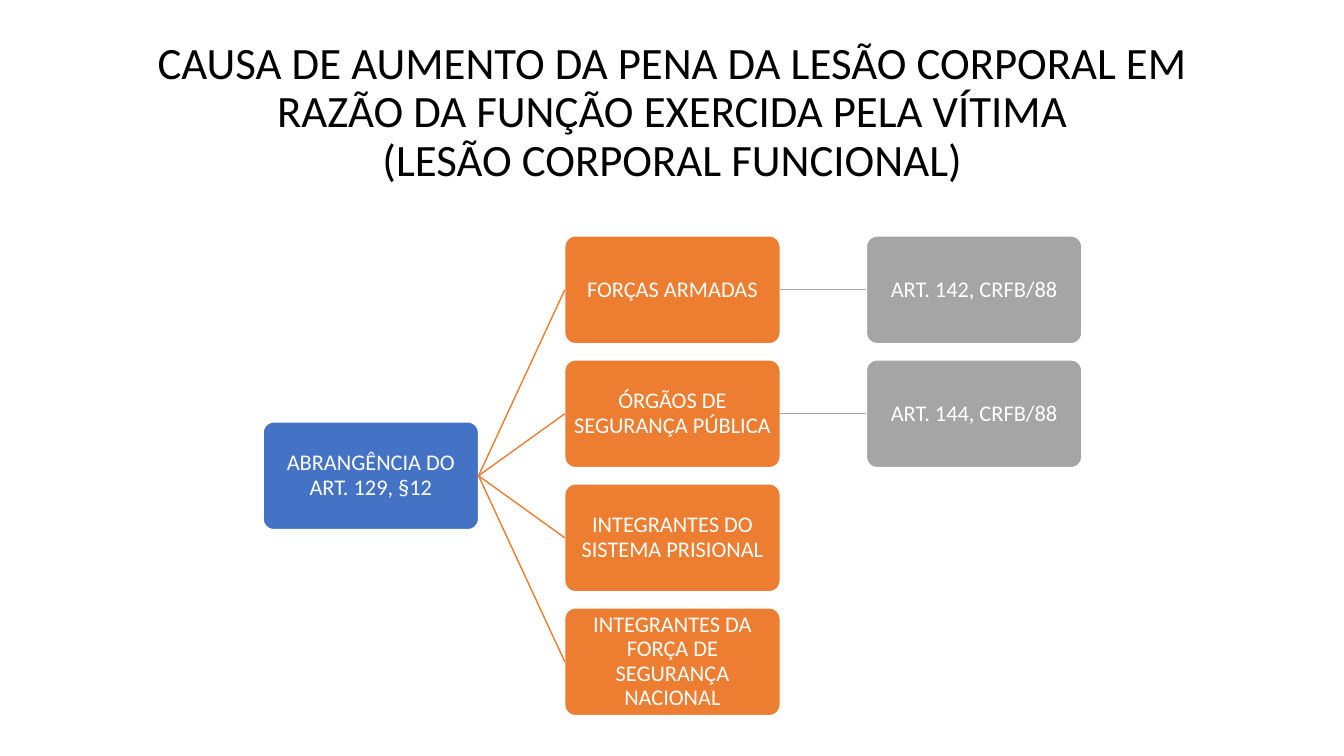
from collections import namedtuple
from dataclasses import dataclass

from lxml.etree import SubElement
from pptx import Presentation
from pptx.dml.color import RGBColor
from pptx.enum.shapes import MSO_CONNECTOR as Connector, MSO_SHAPE as Shape
from pptx.enum.text import MSO_ANCHOR as Anchor, PP_ALIGN as Align
from pptx.oxml.ns import qn
from pptx.util import Inches, Pt

Box = namedtuple("Box", "left top width height")


@dataclass(frozen=True)
class Theme:
    font: str = "Calibri"
    title_size: int = 32
    node_size: int = 16
    line_width: int = 1
    title_color: str = "000000"
    node_text: str = "FFFFFF"
    node_border: str = "FFFFFF"
    levels: tuple = ("4472C4", "ED7D31", "A5A5A5")


THEME = Theme()
SLIDE = Box(0, 0, 13.33, 7.5)
TITLE_BOX = Box(0.92, 0.4, 11.5, 1.45)
TREE_BOX = Box(2.61, 2.34, 8.12, 4.76)

TITLE = ("CAUSA DE AUMENTO DA PENA DA LESÃO CORPORAL EM RAZÃO DA FUNÇÃO "
         "EXERCIDA PELA VÍTIMA\n(LESÃO CORPORAL FUNCIONAL)")
SCOPE = "ABRANGÊNCIA DO ART. 129, §12"
BRANCHES = [
    ("FORÇAS ARMADAS", "ART. 142, CRFB/88"),
    ("ÓRGÃOS DE SEGURANÇA PÚBLICA", "ART. 144, CRFB/88"),
    ("INTEGRANTES DO SISTEMA PRISIONAL", None),
    ("INTEGRANTES DA FORÇA DE SEGURANÇA NACIONAL", None),
]

# Gaps as shares of a node's width and height
COLUMN_GAP = 0.4
ROW_GAP = 0.15


def rgb(color):
    return RGBColor.from_string(color)


def inches(box):
    return [Inches(length) for length in box]


def write(frame, text, *, size, color, inset_x=0.1, inset_y=0.05):
    frame.word_wrap = True
    frame.vertical_anchor = Anchor.MIDDLE
    frame.margin_left = frame.margin_right = Inches(inset_x)
    frame.margin_top = frame.margin_bottom = Inches(inset_y)
    paragraph = frame.paragraphs[0]
    paragraph.text = text
    paragraph.alignment = Align.CENTER
    paragraph.line_spacing = 0.9
    for run in paragraph.runs:
        run.font.name = THEME.font
        run.font.size = Pt(size)
        run.font.color.rgb = rgb(color)


def add_title(slide, box):
    title = slide.shapes.add_textbox(*inches(box))
    write(title.text_frame, TITLE, size=THEME.title_size, color=THEME.title_color)


def add_node(slide, box, text, color):
    node = slide.shapes.add_shape(Shape.ROUNDED_RECTANGLE, *inches(box))
    node.adjustments[0] = 0.1
    node.shadow.inherit = False
    node.fill.solid()
    node.fill.fore_color.rgb = rgb(color)
    node.line.color.rgb = rgb(THEME.node_border)
    node.line.width = Pt(THEME.line_width)
    write(node.text_frame, text, size=THEME.node_size, color=THEME.node_text,
          inset_x=0.04, inset_y=0.04)
    return node


def add_link(slide, parent, child, color):
    """Join the right side of parent to the left side of child."""
    link = slide.shapes.add_connector(Connector.STRAIGHT, 0, 0, 0, 0)
    link.begin_connect(parent, 3)
    link.end_connect(child, 1)
    link.line.color.rgb = rgb(color)
    link.line.width = Pt(THEME.line_width)
    SubElement(link._element.spPr, qn("a:effectLst"))


def add_tree(slide, box):
    columns, rows = len(THEME.levels), len(BRANCHES)
    width = box.width / (columns + (columns - 1) * COLUMN_GAP)
    height = box.height / (rows + (rows - 1) * ROW_GAP)

    def place(level, row, text, parent=None):
        cell = Box(box.left + level * width * (1 + COLUMN_GAP),
                   box.top + row * height * (1 + ROW_GAP), width, height)
        color = THEME.levels[level]
        node = add_node(slide, cell, text, color)
        if parent is not None:
            add_link(slide, parent, node, color)
        return node

    scope = place(0, (rows - 1) / 2, SCOPE)
    for row, (group, article) in enumerate(BRANCHES):
        branch = place(1, row, group, scope)
        if article:
            place(2, row, article, branch)


def main():
    deck = Presentation()
    deck.slide_width, deck.slide_height = Inches(SLIDE.width), Inches(SLIDE.height)
    slide = deck.slides.add_slide(deck.slide_layouts[6])
    add_title(slide, TITLE_BOX)
    add_tree(slide, TREE_BOX)
    deck.save("out.pptx")


if __name__ == "__main__":
    main()
